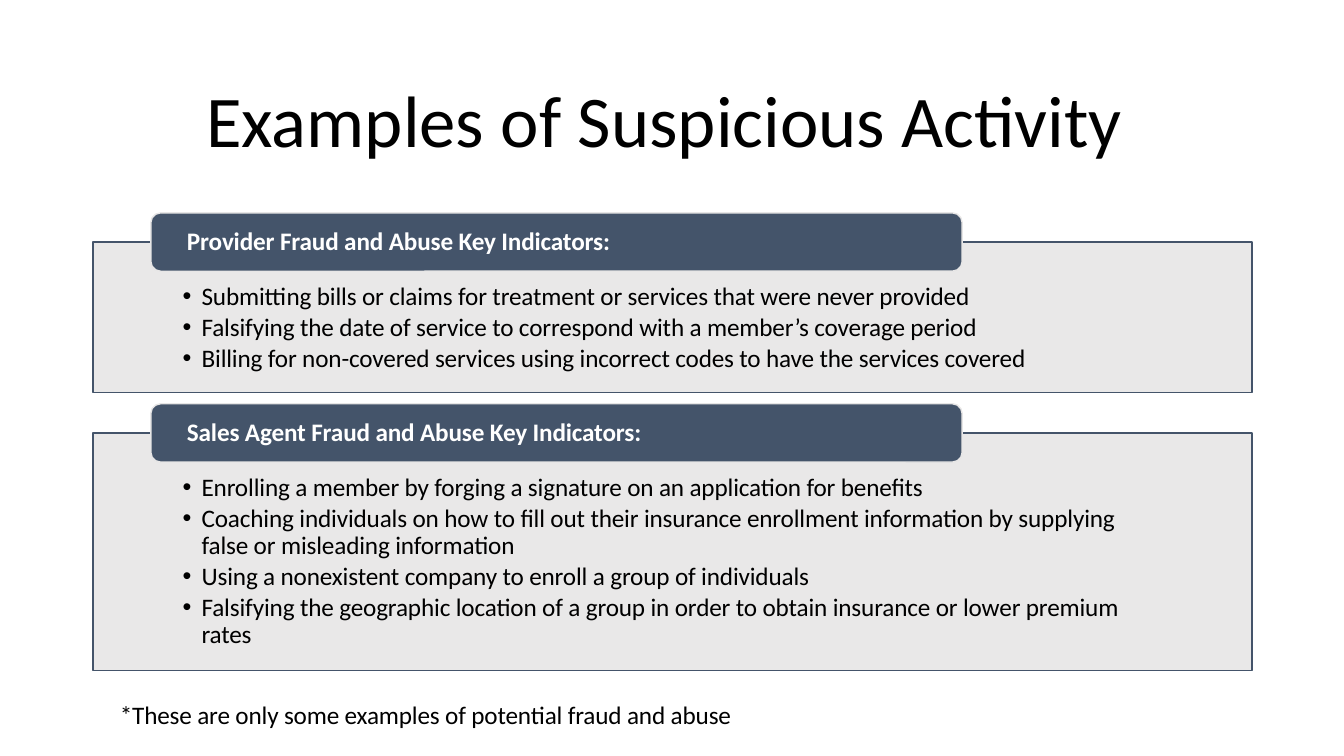
from lxml import etree
from pptx import Presentation
from pptx.dml.color import RGBColor
from pptx.enum.shapes import MSO_SHAPE
from pptx.enum.text import MSO_ANCHOR, MSO_AUTO_SIZE, PP_ALIGN
from pptx.oxml.ns import qn
from pptx.util import Cm, Pt

TITLE = "Examples of Suspicious Activity "
NOTE = "*These are only some examples of potential fraud and abuse"
PANELS = [
    ("Provider Fraud and Abuse Key Indicators:", 3.79, [
        "Submitting bills or claims for treatment or services that were never provided",
        "Falsifying the date of service to correspond with a member’s coverage period",
        "Billing for non-covered services using incorrect codes to have the services covered",
    ]),
    ("Sales Agent Fraud and Abuse Key Indicators:", 5.99, [
        "Enrolling a member by forging a signature on an application for benefits",
        "Coaching individuals on how to fill out their insurance enrollment information "
        "by supplying false or misleading information",
        "Using a nonexistent company to enroll a group of individuals",
        "Falsifying the geographic location of a group in order to obtain insurance "
        "or lower premium rates",
    ]),
]

BLACK = RGBColor(0x00, 0x00, 0x00)
WHITE = RGBColor(0xFF, 0xFF, 0xFF)
NAVY = RGBColor(0x44, 0x54, 0x6A)
GREY = RGBColor(0xE7, 0xE6, 0xE6)
TOP, MIDDLE = MSO_ANCHOR.TOP, MSO_ANCHOR.MIDDLE
LEFT, CENTER = PP_ALIGN.LEFT, PP_ALIGN.CENTER
NO_FIT, GROW = MSO_AUTO_SIZE.NONE, MSO_AUTO_SIZE.SHAPE_TO_FIT_TEXT
ROUNDED = MSO_SHAPE.ROUNDED_RECTANGLE

PANEL_X, PANEL_W, FIRST_Y, GAP = 2.34, 29.21, 6.1, 1.02
TAB_X, TAB_W, TAB_H = PANEL_X + 0.05 * PANEL_W, 0.7 * PANEL_W, 1.47
HANG = Cm(0.48)

TITLE_FONT = {"name": "Calibri", "size": Pt(52)}
BODY_FONT = {"name": "Calibri", "size": Pt(18)}
TAB_FONT = {**BODY_FONT, "bold": True}
TITLE_PARA = {"alignment": CENTER, "line_spacing": 0.9}
TAB_PARA = {"alignment": LEFT, "line_spacing": 0.9}
LIST_PARA = {**TAB_PARA, "space_before": Pt(0), "space_after": Pt(2.7)}
TITLE_FRAME = {"vertical_anchor": MIDDLE, "auto_size": NO_FIT, "word_wrap": True}
TAB_FRAME = {**TITLE_FRAME, "margin_left": Cm(0.84), "margin_right": Cm(0.84),
             "margin_top": 0, "margin_bottom": 0}
LIST_FRAME = {"vertical_anchor": TOP, "auto_size": NO_FIT, "word_wrap": True,
              "margin_left": Cm(2.26), "margin_right": Cm(2.26),
              "margin_top": Cm(1.04), "margin_bottom": Cm(0.36)}
NOTE_FRAME = {"word_wrap": True, "auto_size": GROW}


def apply(obj, values):
    """Set every attribute named in values on obj."""
    for name, value in values.items():
        setattr(obj, name, value)


def place(sp, x, y, w, h):
    """Move and size a shape, in centimetres."""
    apply(sp, {"left": Cm(x), "top": Cm(y), "width": Cm(w), "height": Cm(h)})


def write(sp, lines, frame, para, font, color, spacing=-10):
    """Write one formatted paragraph for each line."""
    tf = sp.text_frame
    apply(tf, frame)
    for i, line in enumerate(lines):
        p = tf.add_paragraph() if i else tf.paragraphs[0]
        apply(p, para)
        r = p.add_run()
        r.text = line
        apply(r.font, font)
        r.font.color.rgb = color
        r.font._element.set("spc", str(spacing))


def paint(sp, fill, line):
    """Give a shape a solid fill and a thin outline."""
    sp.fill.solid()
    sp.fill.fore_color.rgb = fill
    sp.line.color.rgb = line
    sp.line.width = Pt(1)


def add_bullet(p):
    """Give a paragraph a hanging round bullet."""
    pPr = p._p.get_or_add_pPr()
    pPr.set("marL", str(HANG))
    pPr.set("indent", str(-HANG))
    etree.SubElement(pPr, qn("a:buChar")).set("char", "•")


def add_panel(s, sp, y, heading, height, items):
    """Draw one bulleted panel with its heading tab."""
    place(sp, PANEL_X, y, PANEL_W, height)
    paint(sp, GREY, NAVY)
    color = sp._element.spPr.find(qn("a:solidFill")).find(qn("a:srgbClr"))
    etree.SubElement(color, qn("a:alpha")).set("val", "90000")
    write(sp, items, LIST_FRAME, LIST_PARA, BODY_FONT, BLACK)
    for p in sp.text_frame.paragraphs:
        add_bullet(p)
    tab = s.shapes.add_shape(ROUNDED, 0, 0, 0, 0)
    place(tab, TAB_X, y - TAB_H / 2, TAB_W, TAB_H)
    tab.shadow.inherit = False
    paint(tab, NAVY, GREY)
    write(tab, [heading], TAB_FRAME, TAB_PARA, TAB_FONT, WHITE)


def main():
    """Build the slide and save it."""
    prs = Presentation()
    prs.slide_width, prs.slide_height = Cm(33.87), Cm(19.05)
    s = prs.slides.add_slide(prs.slide_layouts.get_by_name("Two Content"))
    title = s.shapes.title
    place(title, PANEL_X, 1.55, PANEL_W, 3.15)
    write(title, [TITLE], TITLE_FRAME, TITLE_PARA, TITLE_FONT, BLACK, 0)
    y = FIRST_Y
    for idx, (heading, height, items) in enumerate(PANELS, 1):
        add_panel(s, s.placeholders[idx], y, heading, height, items)
        y += height + GAP
    note = s.shapes.add_textbox(0, 0, 0, 0)
    place(note, 2.77, 17.5, 16.94, 1.02)
    write(note, [NOTE], NOTE_FRAME, {"alignment": LEFT}, BODY_FONT, BLACK)
    prs.save("out.pptx")


if __name__ == "__main__":
    main()
